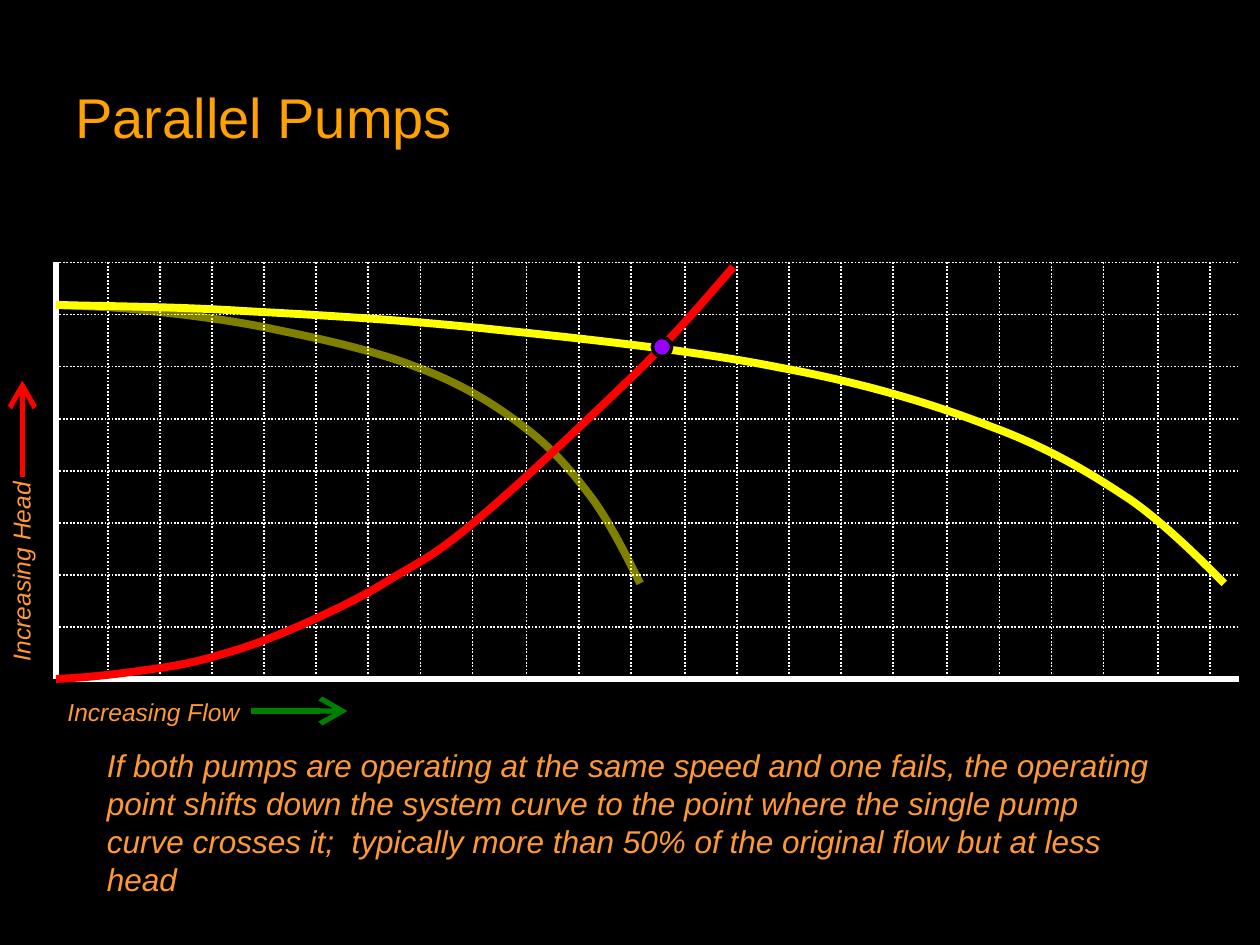
import pptx
import pptx.dml.color
import pptx.enum.dml
import pptx.enum.shapes
import pptx.enum.text
import pptx.oxml.ns
import pptx.util
from lxml import etree

Pt = pptx.util.Pt
qn = pptx.oxml.ns.qn

# Content (all lengths in points)
TITLE = "Parallel Pumps"
CAPTION = ("If both pumps are operating at the same speed and one fails, the operating "
           "point shifts down the system curve to the point where the single pump curve "
           "crosses it;  typically more than 50% of the original flow but at less head")
FLOW_LABEL, HEAD_LABEL = "Increasing Flow", "Increasing Head"

BLACK, WHITE, TITLE_ORANGE, ORANGE = "000000", "FFFFFF", "FFA100", "FF9933"
YELLOW, RED, GREEN, PURPLE = "FFFF00", "FF0000", "008000", "9900FF"

LEFT, TOP, RIGHT, BOTTOM = 32, 150, 707.8, 388
ROWS = 8
CELL = (BOTTOM - TOP) / ROWS
# Square cells in groups of columns, with a slightly wider cell between groups
COLUMN_GROUPS, GROUP_GAP = (8, 3, 5, 4, 2), 1.2

# Bezier knots: start point, then two controls and an end per segment
SINGLE_PUMP = [
    (LEFT, 174.2), (41, 175), (64.8, 175), (85.7, 177.8),
    (106.6, 180), (132.5, 182.9), (158.4, 188.6),
    (183.6, 193.7), (216, 200.9), (239, 210.2),
    (262.8, 218.9), (283, 231.1), (299.5, 244.1),
    (316.1, 256.3), (328.3, 271.4), (339.1, 285.8),
    (349.9, 301), (360.7, 323.3), (365.8, 333.4),
]
SYSTEM = [
    (LEFT, BOTTOM), (49, 387.4), (67, 385.2), (82.8, 383),
    (98.6, 380.9), (111.6, 378.7), (127.4, 373.7),
    (143.3, 369.4), (161.3, 362.2), (177.1, 355),
    (193, 347.8), (208.1, 340.6), (223.9, 330.5),
    (239.8, 321.1), (248.4, 317.5), (272.2, 297.4),
    (295.9, 277.9), (342, 234), (366.5, 210.2),
    (391, 185.8), (408.2, 164.9), (419, 152.6),
]
# Two equal pumps deliver twice the flow at each head
BOTH_PUMPS = [(LEFT + 2 * (x - LEFT), y) for x, y in SINGLE_PUMP]


def rgb(hex_color):
    return pptx.dml.color.RGBColor.from_string(hex_color)


def add_line(shapes, start, end, color, width, dotted=False, arrow=False):
    line = shapes.add_connector(pptx.enum.shapes.MSO_CONNECTOR.STRAIGHT,
                                *(Pt(v) for v in (*start, *end)))
    line.line.color.rgb = rgb(color)
    line.line.width = Pt(width)
    if dotted:
        line.line.dash_style = pptx.enum.dml.MSO_LINE.ROUND_DOT
    if arrow:
        etree.SubElement(line.line._get_or_add_ln(), qn("a:tailEnd"),
                         type="arrow", w="lg", len="lg")
    etree.SubElement(line._element.spPr, qn("a:effectLst"))


def add_curve(shapes, knots, color, opacity=None):
    start, *rest = [(Pt(x), Pt(y)) for x, y in knots]
    builder = shapes.build_freeform(*start)
    builder.add_line_segments(rest, close=False)
    curve = builder.convert_to_shape()
    # Join each three straight steps into one Bezier segment
    outline = curve._element.find(".//" + qn("a:path"))
    steps = outline.findall(qn("a:lnTo"))
    for i in range(0, len(steps), 3):
        segment = etree.SubElement(outline, qn("a:cubicBezTo"))
        for step in steps[i:i + 3]:
            segment.append(step[0])
            outline.remove(step)
    curve.shadow.inherit = False
    curve.fill.background()
    curve.line.color.rgb = rgb(color)
    curve.line.width = Pt(4.5)
    if opacity is not None:
        color_element = curve.line._get_or_add_ln().find(".//" + qn("a:srgbClr"))
        etree.SubElement(color_element, qn("a:alpha"), val=str(opacity * 1000))


def add_text(shapes, text, box, size, color, italic=True, middle=False, rotation=0):
    label = shapes.add_textbox(*(Pt(v) for v in box))
    label.rotation = rotation
    frame = label.text_frame
    frame.word_wrap = True
    if middle:
        frame.vertical_anchor = pptx.enum.text.MSO_ANCHOR.MIDDLE
    frame.text = text
    font = frame.paragraphs[0].runs[0].font
    font.name, font.size, font.italic = "Arial", Pt(size), italic
    font.color.rgb = rgb(color)


def main():
    deck = pptx.Presentation()
    deck.slide_width, deck.slide_height = Pt(720), Pt(540)
    slide = deck.slides.add_slide(deck.slide_layouts[6])
    slide.background.fill.solid()
    slide.background.fill.fore_color.rgb = rgb(BLACK)
    shapes = slide.shapes

    # Grid
    for row in range(ROWS):
        y = TOP + row * CELL
        add_line(shapes, (LEFT, y), (RIGHT, y), WHITE, 1, dotted=True)
    x = LEFT
    for columns in COLUMN_GROUPS:
        for _ in range(columns):
            x += CELL
            add_line(shapes, (x, TOP), (x, BOTTOM), WHITE, 1, dotted=True)
        x += GROUP_GAP

    # Axes with their labels and arrows
    add_line(shapes, (LEFT, TOP), (LEFT, BOTTOM), WHITE, 3)
    add_line(shapes, (LEFT, BOTTOM), (RIGHT, BOTTOM), WHITE, 3)
    add_text(shapes, FLOW_LABEL, (31.5, 394.9, 119.5, 24.5), 14, ORANGE)
    add_line(shapes, (143.5, 406.3), (198.5, 406.3), GREEN, 3, arrow=True)
    add_text(shapes, HEAD_LABEL, (-47.5, 312.8, 119.5, 24.5), 14, ORANGE, rotation=270)
    add_line(shapes, (12.8, 272.5), (12.8, 217.5), RED, 3, arrow=True)

    # Curves, with the title between them in stacking order
    add_curve(shapes, SINGLE_PUMP, YELLOW, opacity=50)
    add_curve(shapes, SYSTEM, RED)
    add_text(shapes, TITLE, (36, 21.6, 648, 90), 32, TITLE_ORANGE, italic=False, middle=True)
    add_curve(shapes, BOTH_PUMPS, YELLOW)

    # Caption
    add_text(shapes, CAPTION, (54, 423, 612, 93.6), 18, ORANGE)

    # Operating point
    point = shapes.add_shape(pptx.enum.shapes.MSO_SHAPE.OVAL,
                             Pt(372.8), Pt(192.8), Pt(11), Pt(11))
    point.shadow.inherit = False
    point.fill.solid()
    point.fill.fore_color.rgb = rgb(PURPLE)
    point.line.color.rgb = rgb(BLACK)
    point.line.width = Pt(2)

    deck.save("out.pptx")


if __name__ == "__main__":
    main()
